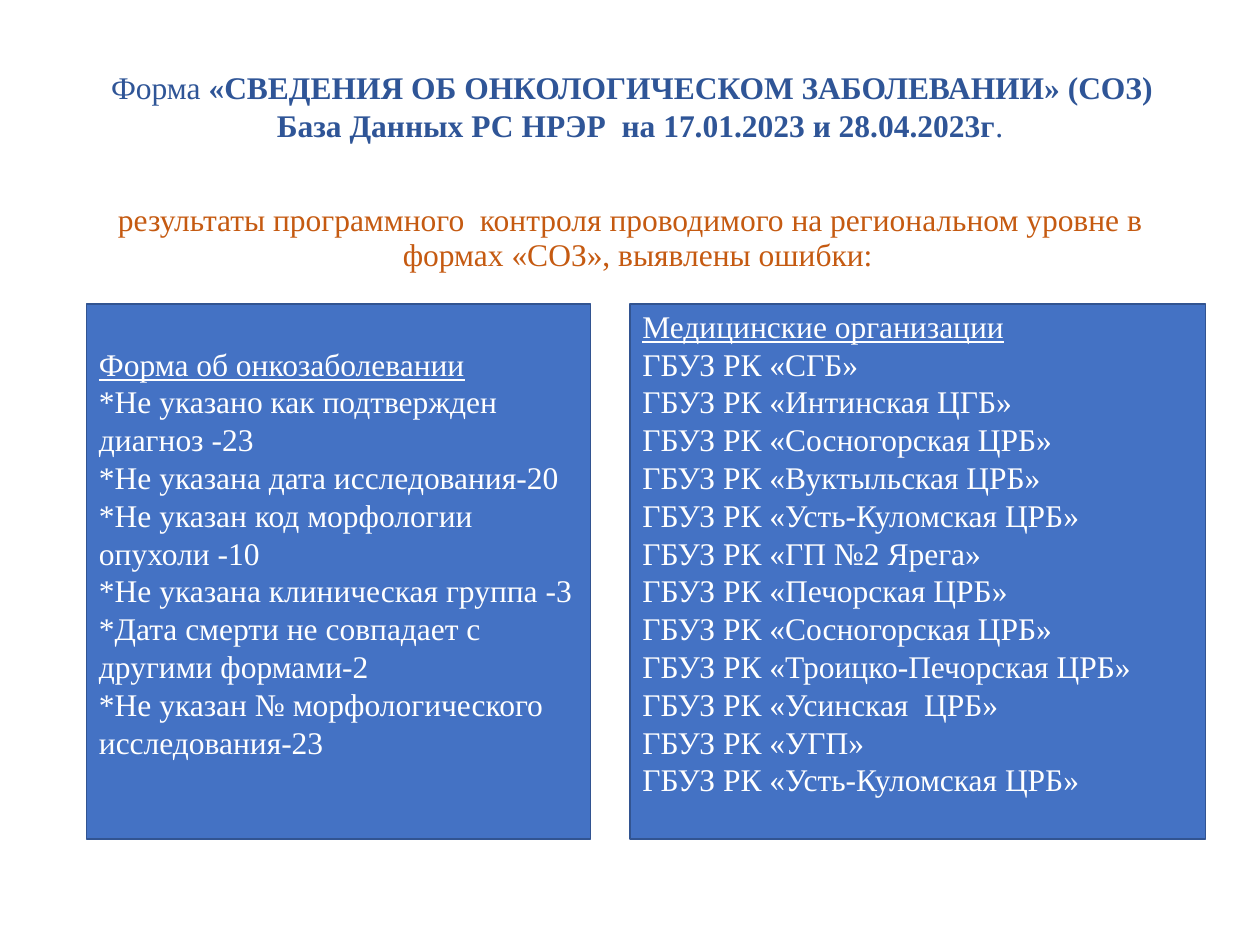
from pptx import Presentation
from pptx.dml.color import RGBColor
from pptx.enum import shapes, text
from pptx.util import Pt

HUES = {"title": "2F5597", "lead": "C55A11", "fill": "4472C4",
        "line": "325491", "text": "FFFFFF"}
MID = text.PP_ALIGN.CENTER


def hue(key):
    return RGBColor.from_string(HUES[key])


def write(para, words, key, **form):
    """Add a run to a paragraph and set its font."""
    run = para.add_run()
    run.text = words
    run.font.color.rgb = hue(key)
    for name, val in {"name": "Times New Roman", "size": Pt(18), **form}.items():
        setattr(run.font, name, val)


deck = Presentation()
deck.slide_width, deck.slide_height = Pt(720), Pt(540)
slide = deck.slides.add_slide(deck.slide_layouts[5])

# Title
title = slide.shapes.title
title.left, title.top, title.width, title.height = Pt(42.5), Pt(21), Pt(646.5), Pt(79)
frame = title.text_frame
frame.vertical_anchor = text.MSO_ANCHOR.MIDDLE
frame.auto_size = text.MSO_AUTO_SIZE.NONE
para = frame.paragraphs[0]
para.alignment = MID
write(para, "Форма", "title", bold=False)
write(para, " «СВЕДЕНИЯ ОБ ОНКОЛОГИЧЕСКОМ ЗАБОЛЕВАНИИ» (СОЗ)  ", "title", bold=True)
para.add_line_break()
write(para, "База Данных РС НРЭР  на 17.01.2023 и 28.04.2023г", "title", bold=True)
write(para, ".", "title", bold=False)

# Lead sentence
lead = slide.shapes.add_textbox(Pt(49.5), Pt(111.5), Pt(621), Pt(56)).text_frame
lead.word_wrap = True
para = lead.paragraphs[0]
para.alignment, para.line_spacing = MID, 0.9
props = para._p.get_or_add_pPr()
props.set("marL", str(Pt(13.5)))
props.set("indent", str(Pt(-13.5)))
write(para, " ", "lead", size=Pt(20))
write(para, "результаты программного  контроля проводимого на региональном уровне в  "
            "формах «СОЗ», выявлены ошибки: ", "lead")

# Panels: left, width, heading, lines
clinics = ["СГБ", "Интинская ЦГБ", "Сосногорская ЦРБ", "Вуктыльская ЦРБ",
           "Усть-Куломская ЦРБ", "ГП №2 Ярега", "Печорская ЦРБ",
           "Сосногорская ЦРБ", "Троицко-Печорская ЦРБ", "Усинская  ЦРБ",
           "УГП", "Усть-Куломская ЦРБ"]
errors = ["Не указано как подтвержден диагноз -23",
          "Не указана дата исследования-20",
          "Не указан код морфологии  опухоли -10",
          "Не указана клиническая группа -3",
          "Дата смерти не совпадает с другими формами-2",
          "Не указан № морфологического исследования-23"]
panels = [
    (360, 329, "Медицинские организации", [f"ГБУЗ РК «{name}»" for name in clinics]),
    (49.5, 288, "Форма об онкозаболевании", [f"*{name}" for name in errors]),
]
inset = {"margin_top": Pt(1.5), "margin_bottom": Pt(23.1), "word_wrap": True,
         "vertical_anchor": text.MSO_ANCHOR.MIDDLE}

for left, width, head, lines in panels:
    box = slide.shapes.add_shape(shapes.MSO_SHAPE.RECTANGLE,
                                 Pt(left), Pt(173.5), Pt(width), Pt(306))
    box.shadow.inherit = False
    box.fill.solid()
    box.fill.fore_color.rgb = hue("fill")
    box.line.color.rgb = hue("line")
    box.line.width = Pt(1)
    frame = box.text_frame
    for name, val in inset.items():
        setattr(frame, name, val)
    for row, words in enumerate([head, *lines]):
        para = frame.add_paragraph() if row else frame.paragraphs[0]
        para.alignment = text.PP_ALIGN.LEFT
        write(para, words, "text", underline=row == 0)

deck.save("out.pptx")
